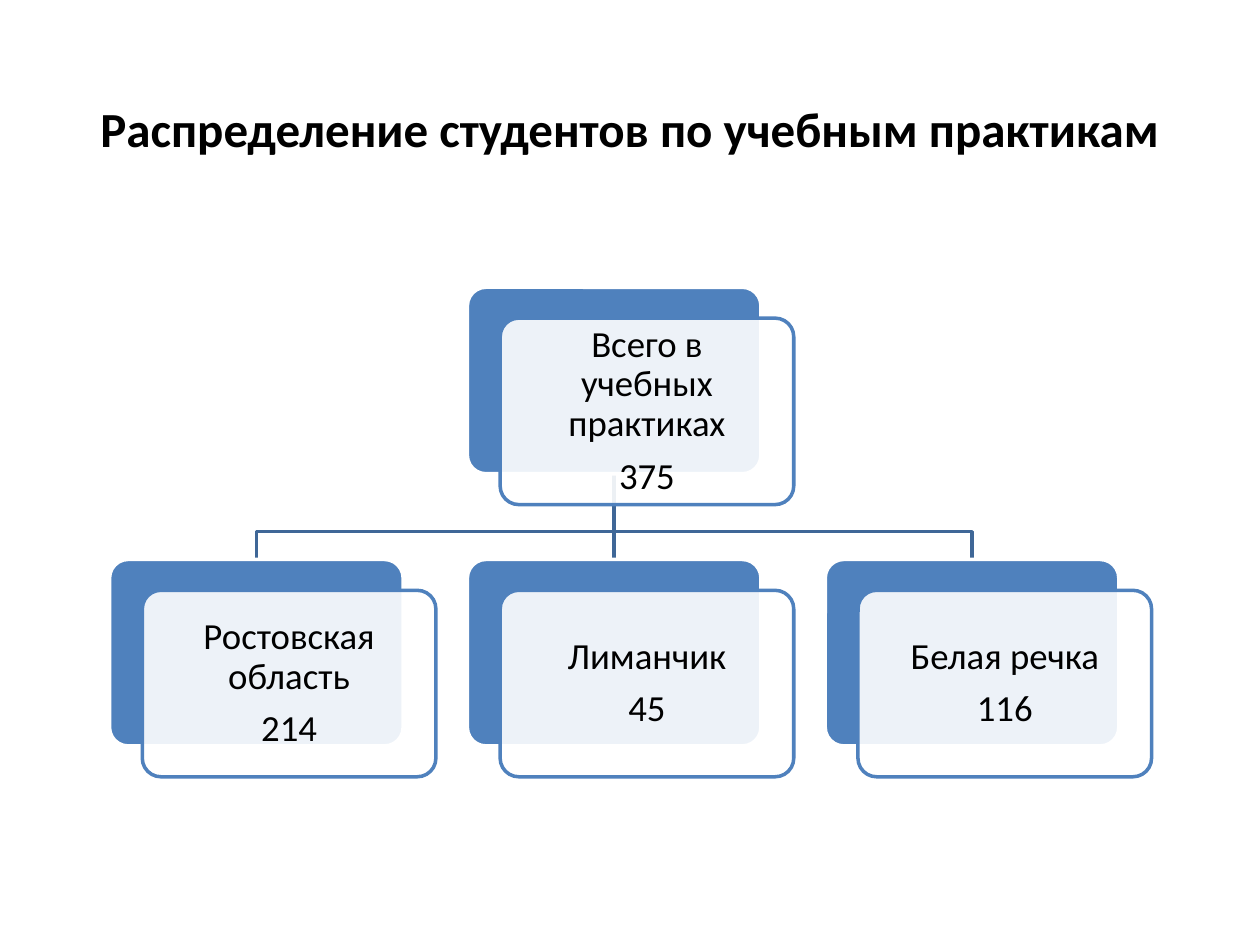
import pptx
import pptx.util
import pptx.dml.color
import pptx.enum.shapes
import pptx.enum.text
import pptx.oxml.ns
import lxml.etree

Inches = pptx.util.Inches
Pt = pptx.util.Pt
RGBColor = pptx.dml.color.RGBColor
qn = pptx.oxml.ns.qn

BLACK = RGBColor(0x00, 0x00, 0x00)
WHITE = RGBColor(0xFF, 0xFF, 0xFF)
BLUE = RGBColor(0x4F, 0x81, 0xBD)
DARK_BLUE = RGBColor(0x3F, 0x67, 0x97)

FONT = "Calibri"
CARD_WIDTH, CARD_HEIGHT = Inches(2.33), Inches(1.48)
CARD_OFFSET_X, CARD_OFFSET_Y = Inches(0.26), Inches(0.245)
CARD_PITCH = Inches(2.84)
LEVEL_PITCH = Inches(2.16)
BEND_DROP = Inches(0.46)

TOTAL = ("Всего в учебных практиках", "375")
PRACTICES = [("Ростовская область", "214"), ("Лиманчик", "45"), ("Белая речка", "116")]


def format_paragraph(paragraph, size, line_spacing, bold=False):
    paragraph.alignment = pptx.enum.text.PP_ALIGN.CENTER
    paragraph.line_spacing = line_spacing
    paragraph.font.name = FONT
    paragraph.font.size = Pt(size)
    paragraph.font.bold = bold
    paragraph.font.color.rgb = BLACK


def add_title(slide, left, top, width, height):
    title = slide.shapes.title
    title.left, title.top, title.width, title.height = left, top, width, height
    frame = title.text_frame
    frame.text = "Распределение студентов по учебным практикам"
    frame.vertical_anchor = pptx.enum.text.MSO_ANCHOR.MIDDLE
    frame.auto_size = pptx.enum.text.MSO_AUTO_SIZE.NONE
    format_paragraph(frame.paragraphs[0], 28, 0.8, bold=True)


def add_panel(slide, left, top, fill, line):
    panel = slide.shapes.add_shape(
        pptx.enum.shapes.MSO_SHAPE.ROUNDED_RECTANGLE, left, top, CARD_WIDTH, CARD_HEIGHT)
    panel.adjustments[0] = 0.1
    panel.shadow.inherit = False
    panel.fill.solid()
    panel.fill.fore_color.rgb = fill
    panel.line.color.rgb = line
    panel.line.width = Pt(2)
    return panel


def add_card(slide, left, top, lines):
    """Add a blue panel with a translucent text panel over it; return the blue one."""
    back = add_panel(slide, left, top, BLUE, WHITE)
    front = add_panel(slide, left + CARD_OFFSET_X, top + CARD_OFFSET_Y, WHITE, BLUE)
    color = front.fill._xPr.find(qn("a:solidFill"))[0]
    lxml.etree.SubElement(color, qn("a:alpha")).set("val", "90000")

    frame = front.text_frame
    frame.word_wrap = True
    frame.vertical_anchor = pptx.enum.text.MSO_ANCHOR.MIDDLE
    frame.margin_left = frame.margin_right = Inches(0.13)
    frame.margin_top = frame.margin_bottom = Inches(0.13)
    frame.text = "\n".join(lines)
    for paragraph in frame.paragraphs:
        format_paragraph(paragraph, 21, 0.9)
        paragraph.space_after = Pt(7.35)
    return back


def style_branch(branch):
    branch.line.color.rgb = DARK_BLUE
    branch.line.width = Pt(2)


def add_bent_branch(slide, start_x, start_y, end_x, end_y):
    bend_y = start_y + BEND_DROP
    builder = slide.shapes.build_freeform(start_x, start_y)
    builder.add_line_segments(
        [(start_x, bend_y), (end_x, bend_y), (end_x, end_y)], close=False)
    branch = builder.convert_to_shape()
    branch.fill.background()
    branch.shadow.inherit = False
    style_branch(branch)


def add_straight_branch(slide, x, start_y, end_y):
    branch = slide.shapes.add_connector(
        pptx.enum.shapes.MSO_CONNECTOR.STRAIGHT, x, start_y, x, end_y)
    style_branch(branch)
    lxml.etree.SubElement(branch._element.spPr, qn("a:effectLst"))
    return branch


def add_hierarchy(slide, left, top):
    lefts = [left + column * CARD_PITCH for column in range(len(PRACTICES))]
    centers = [card_left + CARD_WIDTH // 2 for card_left in lefts]
    root_bottom = top + CARD_HEIGHT
    child_top = top + LEVEL_PITCH

    # Branches lie behind the cards
    add_bent_branch(slide, centers[1], root_bottom, centers[2], child_top)
    trunk = add_straight_branch(slide, centers[1], root_bottom, child_top)
    add_bent_branch(slide, centers[1], root_bottom, centers[0], child_top)

    # Total above, practices below
    root = add_card(slide, lefts[1], top, TOTAL)
    children = [add_card(slide, card_left, child_top, lines)
                for card_left, lines in zip(lefts, PRACTICES)]
    trunk.begin_connect(root, 2)
    trunk.end_connect(children[1], 0)


def main():
    presentation = pptx.Presentation()
    presentation.slide_width = Inches(10)
    presentation.slide_height = Inches(7.5)
    slide = presentation.slides.add_slide(presentation.slide_layouts[5])
    add_title(slide, Inches(0.22), Inches(0.83), Inches(9.55), Inches(0.46))
    add_hierarchy(slide, Inches(0.87), Inches(2.28))
    presentation.save("out.pptx")


if __name__ == "__main__":
    main()
